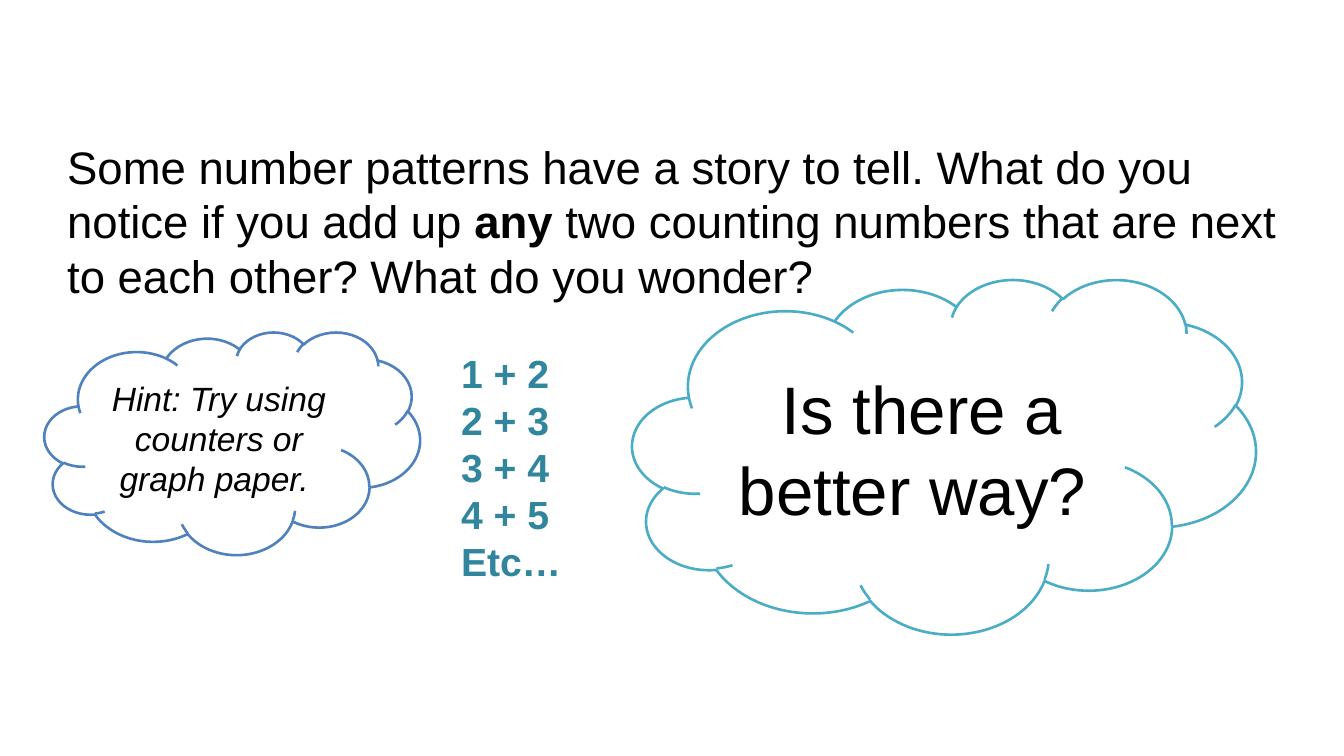
import pptx
import pptx.dml.color
import pptx.enum.shapes
import pptx.enum.text
import pptx.util
from pptx.util import Inches


def color(hex_string):
    """Return the colour for a hex string."""
    return pptx.dml.color.RGBColor.from_string(hex_string)


def format_run(run, size, hex_string, bold=False, italic=False):
    """Set the font of one run."""
    run.font.name = "Arial"
    run.font.size = pptx.util.Pt(size)
    run.font.color.rgb = color(hex_string)
    run.font.bold = bold
    run.font.italic = italic


def add_question(slide, left, top, width, height):
    """Place the opening question with its stressed word."""
    text_frame = slide.shapes.add_textbox(left, top, width, height).text_frame
    text_frame.word_wrap = True
    text_frame.margin_left = text_frame.margin_right = 0
    text_frame.margin_top = text_frame.margin_bottom = 0
    parts = [
        ("Some number patterns have a story to tell. What do you notice if you add up ", False),
        ("any", True),
        (" two counting numbers that are next to each other? What do you wonder?", False),
    ]
    for text, bold in parts:
        run = text_frame.paragraphs[0].add_run()
        run.text = text
        format_run(run, 39, "000000", bold=bold)


def add_sums(slide, left, top, width, height):
    """Place the list of sums of neighbouring numbers."""
    text_frame = slide.shapes.add_textbox(left, top, width, height).text_frame
    text_frame.word_wrap = False
    text_frame.auto_size = pptx.enum.text.MSO_AUTO_SIZE.SHAPE_TO_FIT_TEXT
    sums = [f"{number} + {number + 1}" for number in range(1, 5)]
    text_frame.text = "\n".join(sums + ["Etc…"])
    for paragraph in text_frame.paragraphs:
        format_run(paragraph.runs[0], 33.6, "31859C", bold=True)


def add_cloud(slide, left, top, width, height, text, size, outline, italic=False):
    """Place a white cloud with centred text."""
    cloud = slide.shapes.add_shape(
        pptx.enum.shapes.MSO_SHAPE.CLOUD, left, top, width, height)
    cloud.shadow.inherit = False
    cloud.fill.solid()
    cloud.fill.fore_color.rgb = color("FFFFFF")
    cloud.line.color.rgb = color(outline)
    cloud.line.width = pptx.util.Pt(2.25)
    text_frame = cloud.text_frame
    text_frame.word_wrap = True
    text_frame.vertical_anchor = pptx.enum.text.MSO_ANCHOR.MIDDLE
    text_frame.text = text
    paragraph = text_frame.paragraphs[0]
    paragraph.alignment = pptx.enum.text.PP_ALIGN.CENTER
    format_run(paragraph.runs[0], size, "000000", italic=italic)


def main():
    """Build the number pattern slide and save it."""
    presentation = pptx.Presentation()
    presentation.slide_width = Inches(16)
    presentation.slide_height = Inches(9)
    slide = presentation.slides.add_slide(presentation.slide_layouts[6])
    add_question(slide, Inches(0.8), Inches(1.65), Inches(14.4), Inches(5.94))
    add_sums(slide, Inches(5.39), Inches(4.11), Inches(1.39), Inches(3.49))
    add_cloud(slide, Inches(0.53), Inches(3.95), Inches(4.47), Inches(2.65),
              "Hint: Try using counters or graph paper. ", 28.8, "4F81BD", italic=True)
    add_cloud(slide, Inches(7.53), Inches(3.32), Inches(7.42), Inches(4.22),
              "Is there a better way? ", 57.6, "4BACC6")
    presentation.save("out.pptx")


if __name__ == "__main__":
    main()
